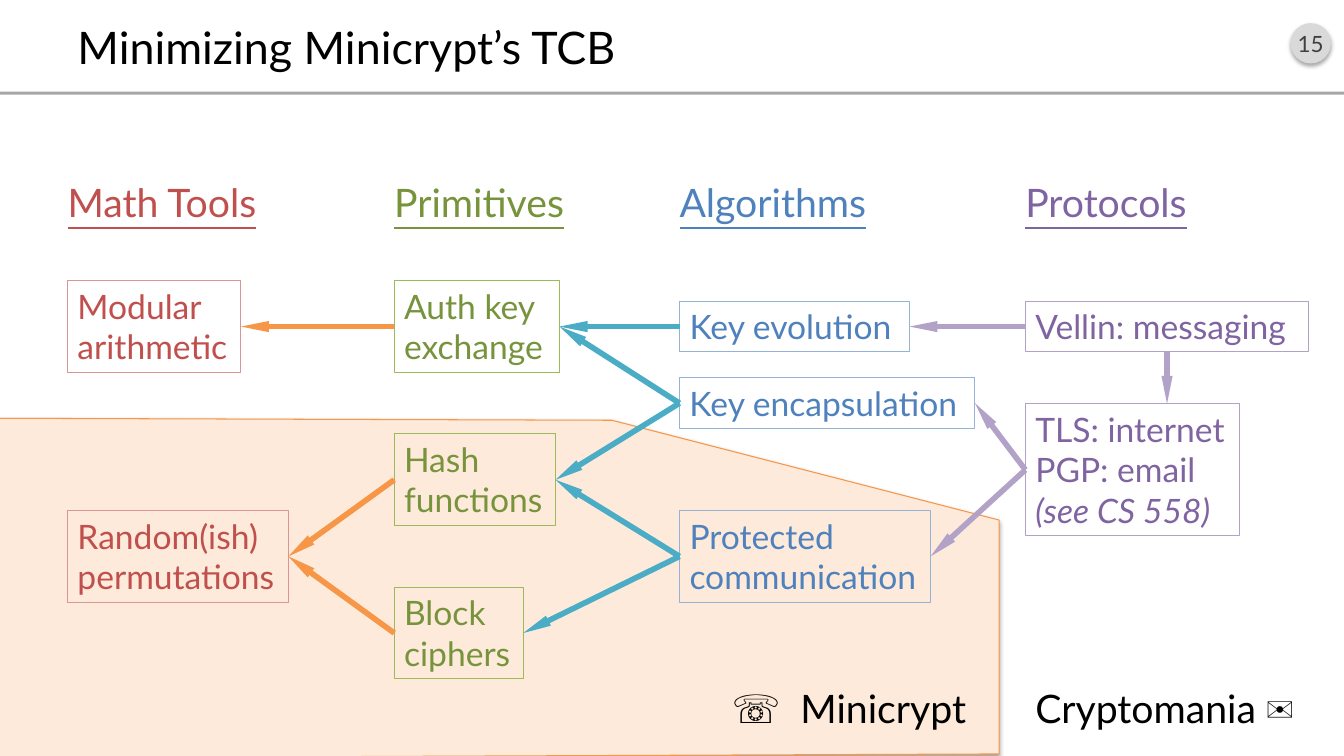
"""Build the slide that maps cryptographic dependencies between Minicrypt and Cryptomania."""
from dataclasses import dataclass

from lxml import etree
from pptx import Presentation
from pptx.dml.color import RGBColor
from pptx.enum.shapes import MSO_CONNECTOR, MSO_SHAPE
from pptx.enum.text import MSO_ANCHOR, MSO_AUTO_SIZE, PP_ALIGN
from pptx.oxml.ns import qn
from pptx.util import Inches, Pt

STRAIGHT = MSO_CONNECTOR.STRAIGHT
OVAL, RECTANGLE = MSO_SHAPE.OVAL, MSO_SHAPE.RECTANGLE
TOP, MIDDLE = MSO_ANCHOR.TOP, MSO_ANCHOR.MIDDLE
LEFT, CENTER, RIGHT = PP_ALIGN.LEFT, PP_ALIGN.CENTER, PP_ALIGN.RIGHT
GROW = MSO_AUTO_SIZE.SHAPE_TO_FIT_TEXT
LEFT_SITE, BOTTOM_SITE, RIGHT_SITE = 1, 2, 3


@dataclass(frozen=True)
class Theme:
    font: str = "Lato"
    title: int = 32
    heading: int = 28
    body: int = 24
    number: int = 16
    border: float = 0.75
    arrow: float = 4
    black: str = "000000"
    badge: str = "D9D9D9"
    badge_text: str = "404040"
    rule: str = "A6A6A6"
    region: str = "FDEADA"
    orange: str = "F79646"
    teal: str = "4BACC6"
    lilac: str = "B3A2C7"


THEME = Theme()
SLIDE_WIDTH, SLIDE_HEIGHT = 13.33, 7.5
COLUMN_LEFTS = (0.67, 3.91, 6.74, 10.17)
FIRST_ROW, ROW_PITCH = 3.24, 0.76
TEXT_HEIGHTS = {1: 0.5, 2: 0.91, 3: 1.31}
HEADING_TOP, FOOTER_TOP, HEADING_HEIGHT = 1.72, 6.74, 0.57

TITLE = "Minimizing Minicrypt’s TCB"
SLIDE_NUMBER = "15"
COLUMNS = [
    ("Math Tools", 2.12, "C0504D", "D99694"),
    ("Primitives", 1.9, "77933C", "9BBB59"),
    ("Algorithms", 2.06, "4F81BD", "95B3D7"),
    ("Protocols", 1.8, "8064A2", "B3A2C7"),
]
TOPICS = {
    "modular": (0, 0, 1.72, ["Modular", "arithmetic"], []),
    "random": (0, 3, 2.19, ["Random(ish)", "permutations"], []),
    "exchange": (1, 0, 1.64, ["Auth key", "exchange"], []),
    "hash": (1, 2, 1.6, ["Hash", "functions"], []),
    "block": (1, 4, 1.28, ["Block", "ciphers"], []),
    "evolution": (2, 0, 2.28, ["Key evolution"], []),
    "encapsulation": (2, 1, 2.93, ["Key encapsulation"], []),
    "protected": (2, 3, 2.49, ["Protected", "communication"], []),
    "messaging": (3, 0, 2.81, ["Vellin: messaging"], []),
    "internet": (3, 1.87, 2.12, ["TLS: internet", "PGP: email"], ["(see CS 558)"]),
}
DEPENDENCIES = [
    (THEME.orange, [("modular", "exchange"), ("random", "hash"), ("random", "block")]),
    (THEME.teal, [("exchange", "evolution"), ("exchange", "encapsulation"),
                  ("hash", "encapsulation"), ("hash", "protected"), ("block", "protected")]),
    (THEME.lilac, [("evolution", "messaging"), ("encapsulation", "internet"),
                   ("protected", "internet")]),
]
WORLDS = [
    ("☏  Minicrypt", 7.07, 2.61, RIGHT),
    ("Cryptomania ✉", COLUMN_LEFTS[3], 2.98, LEFT),
]
REGION = [(-0.02, 7.52), (-0.01, 4.15), (6.07, 4.17), (9.91, 5.16), (9.91, 7.48)]


def color(code):
    return RGBColor.from_string(code)


def add_span(para, text, size, code, italic=None, underline=None):
    span = para.add_run()
    span.text = text
    span.font.name = THEME.font
    span.font.size = Pt(size)
    span.font.color.rgb = color(code)
    span.font.italic = italic
    span.font.underline = underline


def add_text(page, text, place, size, code, align=LEFT, underline=None):
    box = page.shapes.add_textbox(*map(Inches, place))
    box.text_frame.word_wrap = False
    para = box.text_frame.paragraphs[0]
    para.alignment = align
    add_span(para, text, size, code, underline=underline)
    return box


def add_solid(page, preset, place, code):
    shape = page.shapes.add_shape(preset, *map(Inches, place))
    shape.shadow.inherit = False
    shape.fill.solid()
    shape.fill.fore_color.rgb = color(code)
    shape.line.fill.background()
    return shape


def add_shadow(shape):
    shape.shadow.inherit = False
    effects = shape.element.spPr.find(qn("a:effectLst"))
    shadow = etree.SubElement(effects, qn("a:outerShdw"), blurRad=str(Pt(3.1)),
                              dist=str(Pt(1.8)), dir="5400000", rotWithShape="0")
    shade = etree.SubElement(shadow, qn("a:srgbClr"), val=THEME.black)
    etree.SubElement(shade, qn("a:alpha"), val="35000")


def add_frame(page):
    badge = add_solid(page, OVAL, (12.8, 0.23, 0.4, 0.4), THEME.badge)
    add_shadow(badge)
    frame = badge.text_frame
    frame.margin_left = frame.margin_right = 0
    frame.vertical_anchor = MIDDLE
    frame.word_wrap = False
    frame.paragraphs[0].alignment = CENTER
    add_span(frame.paragraphs[0], SLIDE_NUMBER, THEME.number, THEME.badge_text)
    add_solid(page, RECTANGLE, (0, 0.91, SLIDE_WIDTH, 0.03), THEME.rule)
    title = add_text(page, TITLE, (0.67, 0.16, 12, 0.6), THEME.title, THEME.black)
    title.text_frame.vertical_anchor = MIDDLE
    title.text_frame.word_wrap = True


def add_region(page):
    start, *corners = [(Inches(x), Inches(y)) for x, y in REGION]
    builder = page.shapes.build_freeform(*start)
    builder.add_line_segments(corners, close=True)
    region = builder.convert_to_shape()
    region.fill.solid()
    region.fill.fore_color.rgb = color(THEME.region)
    region.line.color.rgb = color(THEME.orange)
    region.line.width = Pt(THEME.border)
    add_shadow(region)


def add_topic(page, column, row, width, lines, notes):
    height = TEXT_HEIGHTS[len(lines + notes)]
    top = FIRST_ROW + ROW_PITCH * row - height / 2
    place = (COLUMN_LEFTS[column], top, width, height)
    text_color, border_color = COLUMNS[column][2:]
    box = page.shapes.add_shape(RECTANGLE, *map(Inches, place))
    box.shadow.inherit = False
    box.fill.background()
    box.line.color.rgb = color(border_color)
    box.line.width = Pt(THEME.border)
    frame = box.text_frame
    frame.word_wrap = False
    frame.auto_size = GROW
    frame.vertical_anchor = TOP
    para = frame.paragraphs[0]
    para.alignment = LEFT
    for index, line in enumerate(lines):
        if index:
            para.add_line_break()
        add_span(para, line, THEME.body, text_color)
    for note in notes:
        para = frame.add_paragraph()
        para.alignment = LEFT
        add_span(para, note, THEME.body, text_color, italic=True)
    return box


def add_arrow(page, code, start=(0, 0)):
    arrow = page.shapes.add_connector(STRAIGHT, *start, *start)
    arrow.line.color.rgb = color(code)
    arrow.line.width = Pt(THEME.arrow)
    outline = arrow.element.spPr.find(qn("a:ln"))
    etree.SubElement(outline, qn("a:headEnd"), type="triangle", w="sm", len="lg")
    etree.SubElement(arrow.element.spPr, qn("a:effectLst"))
    return arrow


def main():
    deck = Presentation()
    deck.slide_width, deck.slide_height = Inches(SLIDE_WIDTH), Inches(SLIDE_HEIGHT)
    page = deck.slides.add_slide(deck.slide_layouts[6])
    add_frame(page)
    add_region(page)
    for left, (heading, width, code, _) in zip(COLUMN_LEFTS, COLUMNS):
        box = add_text(page, heading, (left, HEADING_TOP, width, HEADING_HEIGHT),
                       THEME.heading, code, underline=True)
        box.text_frame.margin_left = 0
    for world, left, width, align in WORLDS:
        add_text(page, world, (left, FOOTER_TOP, width, HEADING_HEIGHT),
                 THEME.heading, THEME.black, align)
    boxes = {name: add_topic(page, *topic) for name, topic in TOPICS.items()}
    for code, pairs in DEPENDENCIES:
        for tool, user in pairs:
            arrow = add_arrow(page, code)
            arrow.begin_connect(boxes[tool], RIGHT_SITE)
            arrow.end_connect(boxes[user], LEFT_SITE)
    messaging, internet = boxes["messaging"], boxes["internet"]
    start = (messaging.left + messaging.width // 2, internet.top)
    add_arrow(page, THEME.lilac, start).end_connect(messaging, BOTTOM_SITE)
    deck.save("out.pptx")


if __name__ == "__main__":
    main()
